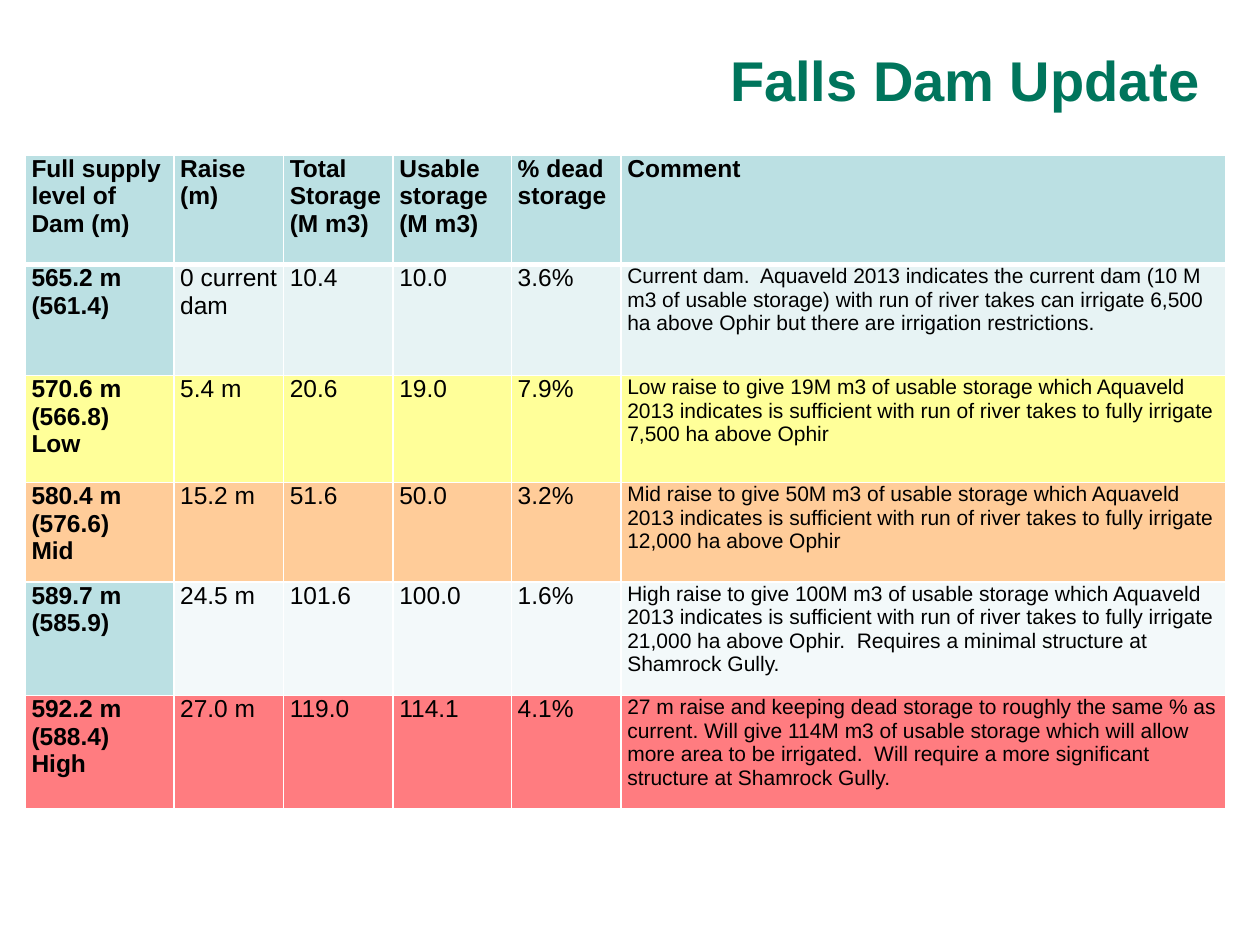
from lxml import etree
from pptx import Presentation
from pptx import util as u
from pptx.dml.color import RGBColor
from pptx.enum import text
from pptx.oxml.ns import qn


def color(hex_code):
    return RGBColor.from_string(hex_code)


def add_span(para, words, size, bold, hex_code):
    span = para.add_run()
    span.text = words
    span.font.name = "Arial"
    span.font.size = u.Pt(size)
    span.font.bold = bold
    span.font.color.rgb = color(hex_code)


deck = Presentation()
deck.slide_width = u.Inches(10)
deck.slide_height = u.Inches(7.5)
page = deck.slides.add_slide(deck.slide_layouts[6])

# Title
box = page.shapes.add_textbox(u.Inches(2.17), u.Inches(0.25), u.Inches(7.58), u.Inches(0.75))
box.text_frame.word_wrap = True
box.text_frame.vertical_anchor = text.MSO_ANCHOR.MIDDLE
para = box.text_frame.paragraphs[0]
para.alignment = text.PP_ALIGN.RIGHT
add_span(para, "Falls Dam Update ", 32, True, "00755C")

# Table content: fill of the first cell, fill of the other cells, cell texts
HEAD = "BBE0E3"
rows = [
    (HEAD, HEAD, ["Full supply level of Dam (m)", "Raise (m)", "Total Storage (M m3)",
                  "Usable storage (M m3)", "% dead storage", "Comment"]),
    (HEAD, "E7F3F4", ["565.2 m\n(561.4)", "0 current dam", "10.4", "10.0", "3.6%",
                      "Current dam.  Aquaveld 2013 indicates the current dam (10 M m3 of usable "
                      "storage) with run of river takes can irrigate 6,500 ha above Ophir but "
                      "there are irrigation restrictions."]),
    ("FFFF99", "FFFF99", ["570.6 m (566.8)\nLow", "5.4 m", "20.6", "19.0", "7.9%",
                          "Low raise to give 19M m3 of usable storage which Aquaveld 2013 "
                          "indicates is sufficient with run of river takes to fully irrigate "
                          "7,500 ha above Ophir"]),
    ("FFCC99", "FFCC99", ["580.4 m (576.6)\nMid", "15.2 m", "51.6", "50.0", "3.2%",
                          "Mid raise to give 50M m3 of usable storage which Aquaveld 2013 "
                          "indicates is sufficient with run of river takes to fully irrigate "
                          "12,000 ha above Ophir"]),
    (HEAD, "F3F9FA", ["589.7 m (585.9)", "24.5 m", "101.6", "100.0", "1.6%",
                      "High raise to give 100M m3 of usable storage which Aquaveld 2013 "
                      "indicates is sufficient with run of river takes to fully irrigate "
                      "21,000 ha above Ophir.  Requires a minimal structure at Shamrock Gully."]),
    ("FF7C80", "FF7C80", ["592.2 m (588.4)\nHigh", "27.0 m", "119.0", "114.1", "4.1%",
                          "27 m raise and keeping dead storage to roughly the same % as current. "
                          "Will give 114M m3 of usable storage which will allow more area to be "
                          "irrigated.  Will require a more significant structure at Shamrock "
                          "Gully."]),
]
widths = [1.18, 0.87, 0.87, 0.94, 0.87, 4.8]
heights = [0.87, 0.88, 0.85, 0.79, 0.9, 0.9]

# Table grid
table = page.shapes.add_table(len(rows), len(widths), u.Inches(0.2), u.Inches(1.23),
                              u.Inches(sum(widths)), u.Inches(sum(heights))).table
for column, width in zip(table.columns, widths):
    column.width = u.Inches(width)
for row, height in zip(table.rows, heights):
    row.height = u.Inches(height)

# Cells
for r, (first_fill, other_fill, words) in enumerate(rows):
    for c, cell_text in enumerate(words):
        cell = table.cell(r, c)
        cell.margin_left = cell.margin_right = u.Inches(0.05)
        cell.margin_top = cell.margin_bottom = 0

        # White borders, thicker between the header and the body; they precede the fill
        for side in ("lnL", "lnR", "lnT", "lnB"):
            thick = (r, side) in ((0, "lnB"), (1, "lnT"))
            line = etree.SubElement(cell._tc.get_or_add_tcPr(), qn("a:" + side),
                                    w=str(u.Pt(3 if thick else 1)))
            fill = etree.SubElement(line, qn("a:solidFill"))
            etree.SubElement(fill, qn("a:srgbClr"), val="FFFFFF")
        cell.fill.solid()
        cell.fill.fore_color.rgb = color(first_fill if c == 0 else other_fill)

        size = 12 if r > 0 and c == len(widths) - 1 else 14
        for i, part in enumerate(cell_text.split("\n")):
            para = cell.text_frame.paragraphs[0] if i == 0 else cell.text_frame.add_paragraph()
            add_span(para, part, size, r == 0 or c == 0, "000000")

deck.save("out.pptx")
